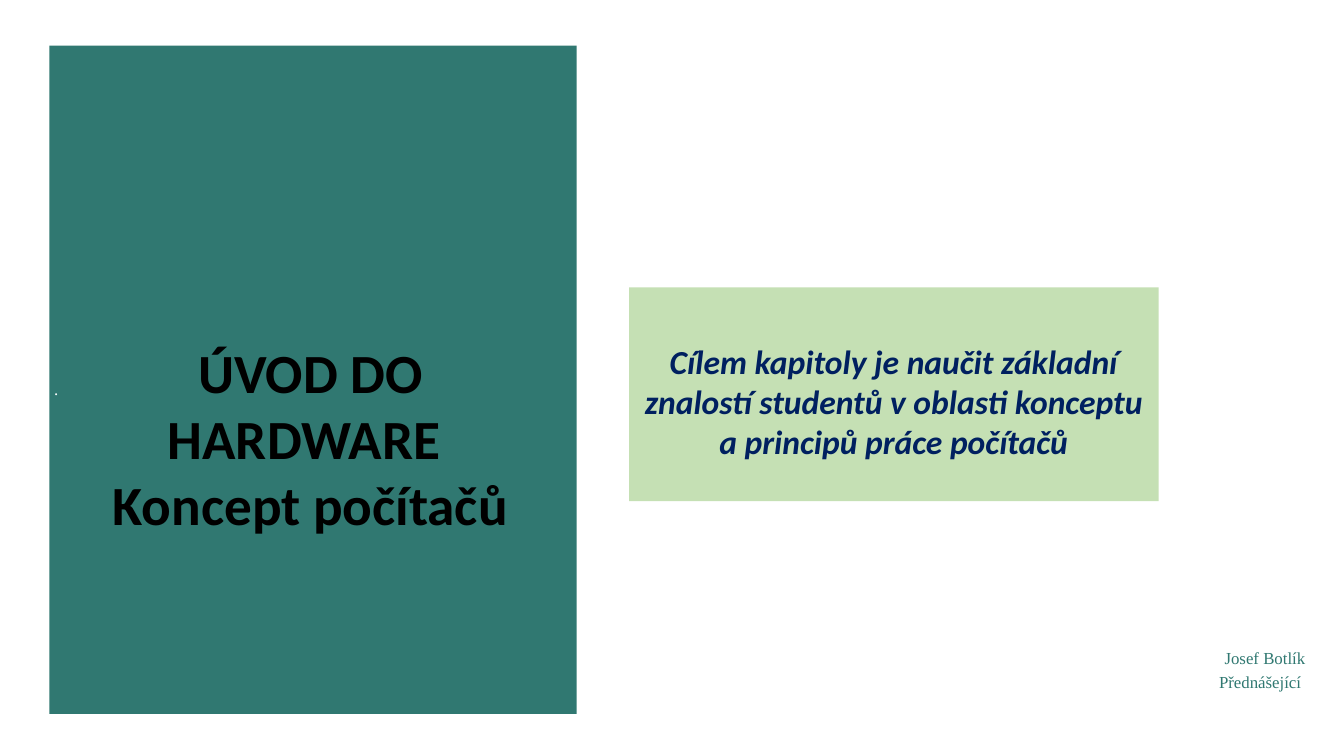
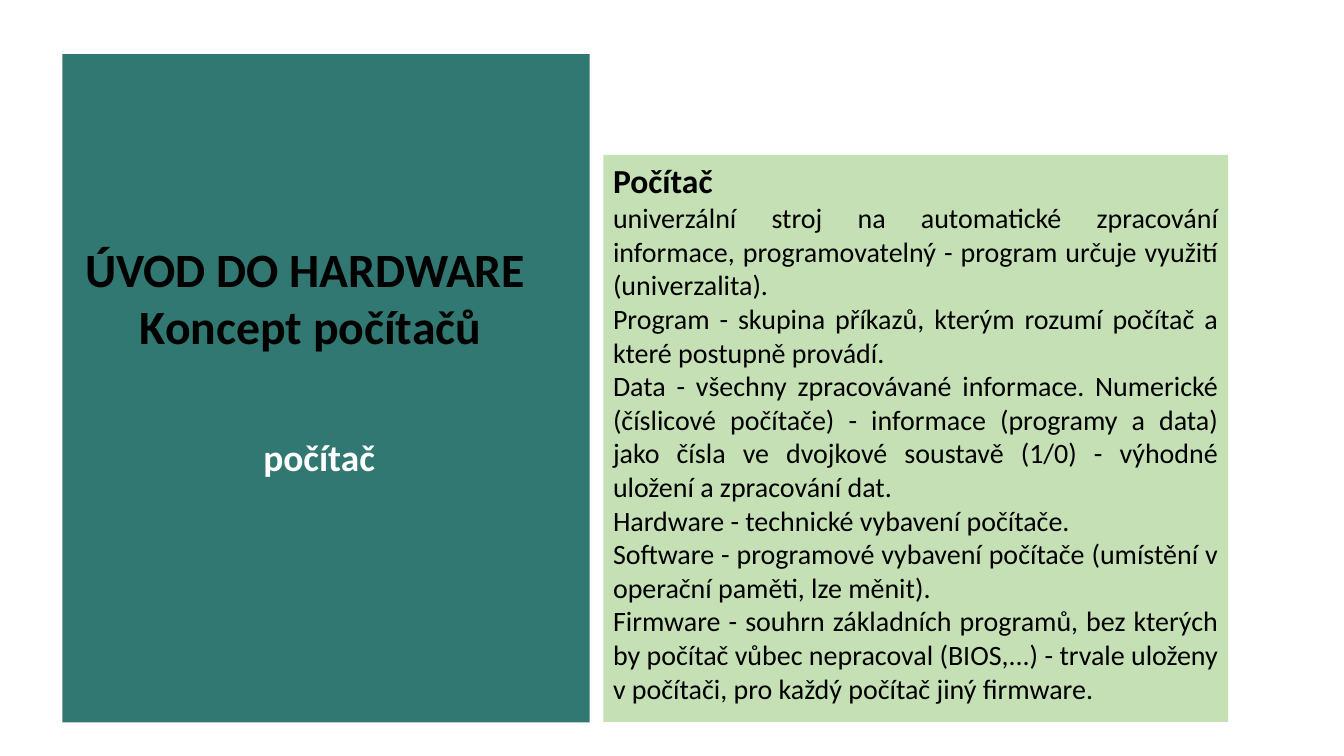
from dataclasses import dataclass

from lxml.etree import SubElement
from pptx import Presentation
from pptx.dml.color import RGBColor
from pptx.enum.shapes import MSO_SHAPE
from pptx.enum.text import MSO_ANCHOR, MSO_AUTO_SIZE, PP_ALIGN
from pptx.oxml.ns import qn
from pptx.util import Pt


@dataclass(frozen=True)
class Theme:
    """Colours, fonts and type sizes shared by the slides."""
    teal: str = "307871"
    green: str = "C5E0B4"
    navy: str = "002060"
    black: str = "000000"
    white: str = "FFFFFF"
    sans: str = "Calibri"
    serif: str = "Times New Roman"
    cover_title: float = 29.6
    title: float = 25.6
    topic: float = 20
    heading: float = 18
    body: float = 15
    small: float = 9


THEME = Theme()
COURSE_TITLE = ["ÚVOD DO HARDWARE ", "Koncept počítačů"]
SIDE_INSET, EDGE_INSET = 5.2, 2.9
PANEL_SIZE = (282.5, 358)

GOAL = ["Cílem kapitoly je naučit základní znalostí studentů v oblasti "
        "konceptu a principů práce počítačů"]
DEFINITIONS = [
    "Počítač ",
    "univerzální stroj na automatické zpracování informace, programovatelný - "
    "program určuje využití (univerzalita). ",
    "Program - skupina příkazů, kterým rozumí počítač a které postupně provádí. ",
    "Data - všechny zpracovávané informace. Numerické (číslicové počítače) - "
    "informace (programy a data) jako čísla ve dvojkové soustavě (1/0) - "
    "výhodné uložení a zpracování dat. ",
    "Hardware - technické vybavení počítače. ",
    "Software - programové vybavení počítače (umístění v operační paměti, "
    "lze měnit). ",
    "Firmware - souhrn základních programů, bez kterých by počítač vůbec "
    "nepracoval (BIOS,...) - trvale uloženy v počítači, pro každý počítač "
    "jiný firmware.",
]


# Text and geometry helpers
def write_text(shape, lines, *, size, color=THEME.black, font=THEME.sans,
               bold=False, italic=False, align=PP_ALIGN.CENTER,
               anchor=MSO_ANCHOR.TOP, side=SIDE_INSET, top=EDGE_INSET,
               bottom=EDGE_INSET, before=0, indent=0, heading_size=None):
    """Fill a shape with paragraphs; heading_size sets off the first one."""
    frame = shape.text_frame
    frame.word_wrap = True
    frame.auto_size = MSO_AUTO_SIZE.NONE
    frame.vertical_anchor = anchor
    frame.margin_left = frame.margin_right = Pt(side)
    frame.margin_top, frame.margin_bottom = Pt(top), Pt(bottom)
    for index, line in enumerate(lines):
        paragraph = frame.add_paragraph() if index else frame.paragraphs[0]
        paragraph.alignment = align
        paragraph.space_before = Pt(before)
        properties = paragraph._p.get_or_add_pPr()
        properties.set("marL", str(Pt(indent)))
        properties.set("indent", "0")
        SubElement(properties, qn("a:buNone"))
        is_heading = heading_size is not None and index == 0
        run = paragraph.add_run()
        run.text = line
        run.font.name = font
        run.font.size = Pt(heading_size if is_heading else size)
        run.font.bold = bold or is_heading
        run.font.italic = italic
        run.font.color.rgb = RGBColor.from_string(color)


def place(shape, left, top, width, height):
    shape.left, shape.top = Pt(left), Pt(top)
    shape.width, shape.height = Pt(width), Pt(height)


def paint(shape, color):
    shape.fill.solid()
    shape.fill.fore_color.rgb = RGBColor.from_string(color)
    shape.line.fill.background()


# Slide elements
def add_panel(slide, left, top):
    """Teal panel behind everything else on the slide."""
    panel = slide.shapes.add_shape(MSO_SHAPE.RECTANGLE, Pt(left), Pt(top),
                                   *(Pt(length) for length in PANEL_SIZE))
    panel.shadow.inherit = False
    paint(panel, THEME.teal)
    panel.element.getparent().insert(2, panel.element)


def set_title(slide, top, height, size, text_top):
    title = slide.shapes.title
    place(title, 39.6, top, 253.5, height)
    write_text(title, COURSE_TITLE, size=size, bold=True, top=text_top)


def set_body(slide, box, lines, **text_format):
    body = slide.placeholders[1]
    place(body, *box)
    paint(body, THEME.green)
    write_text(body, lines, **text_format)


def add_label(slide, box, lines, **text_format):
    label = slide.shapes.add_textbox(*(Pt(length) for length in box))
    write_text(label, lines, **text_format)


# Slides
def build_cover(slide):
    add_panel(slide, 26.5, 24.5)
    set_title(slide, 42.5, 200, THEME.cover_title, text_top=138.5)
    add_label(slide, (23.8, 175.7, 285.8, 170.6), ["."], size=THEME.small,
              color=THEME.white, font=THEME.serif, align=PP_ALIGN.LEFT, top=27)
    set_body(slide, (337, 154, 283.7, 114.5), GOAL, size=THEME.heading,
             color=THEME.navy, bold=True, italic=True, top=28.5)
    add_label(slide, (548, 293, 158.4, 90.7), ["Josef Botlík", "Přednášející "],
              size=THEME.small, color=THEME.teal, font=THEME.serif,
              align=PP_ALIGN.RIGHT, anchor=MSO_ANCHOR.BOTTOM,
              side=7.2, bottom=13, before=1.8)


def build_computer(slide):
    add_panel(slide, 33.4, 29)
    set_title(slide, 69, 134.6, THEME.title, text_top=59.5)
    set_body(slide, (323.2, 83, 334.8, 303.8), DEFINITIONS, size=THEME.body,
             align=PP_ALIGN.JUSTIFY, heading_size=THEME.heading)
    add_label(slide, (51, 229, 213, 31.7), ["počítač"], size=THEME.topic,
              color=THEME.white, bold=True, side=7.2, top=3.6, indent=27)


def main():
    presentation = Presentation()
    presentation.slide_width, presentation.slide_height = Pt(720), Pt(405)
    layout = presentation.slide_layouts[1]
    for build in (build_cover, build_computer):
        build(presentation.slides.add_slide(layout))
    presentation.save("out.pptx")


if __name__ == "__main__":
    main()
